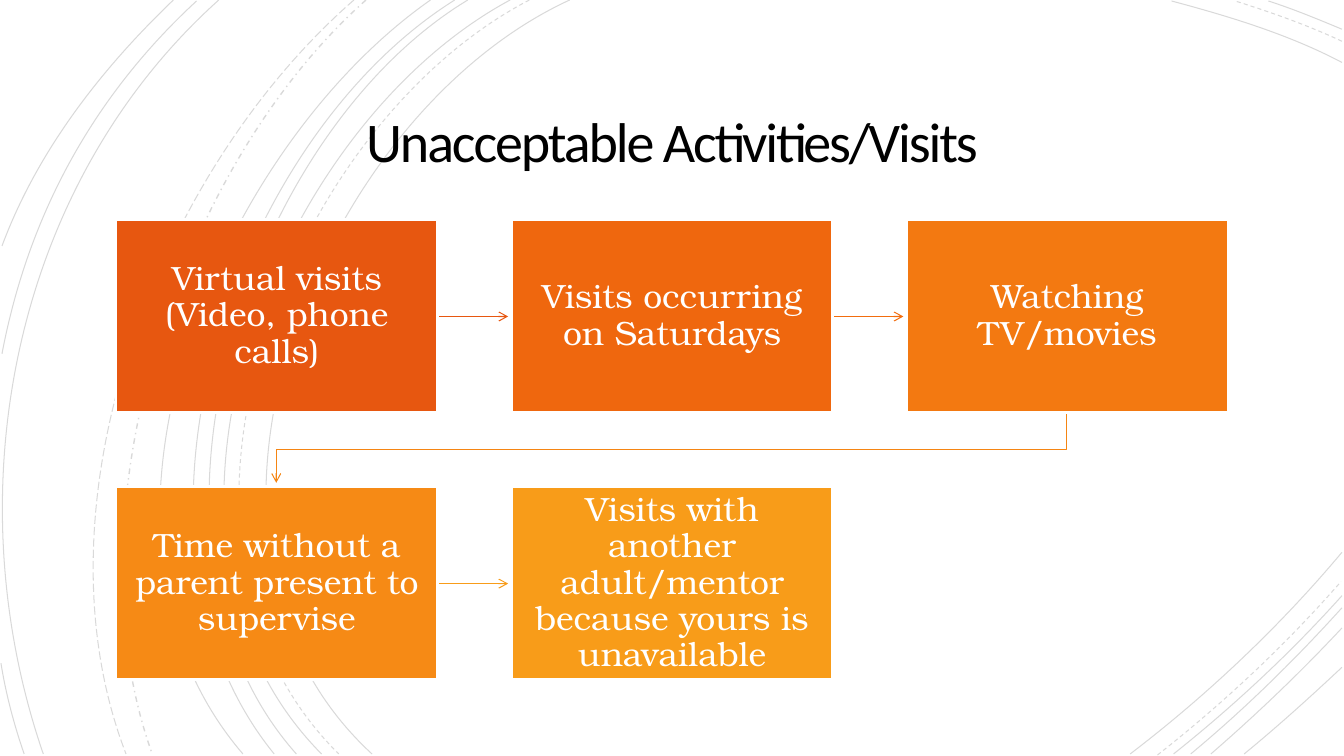
from dataclasses import dataclass

from lxml import etree
from pptx import Presentation
from pptx import util as u
from pptx.dml.color import RGBColor
from pptx.enum import dml, shapes, text
from pptx.oxml.ns import qn

PX = 9144  # EMU per px, 100 px to the inch


@dataclass(frozen=True)
class Theme:
    ink: str = "000000"
    paper: str = "FFFFFF"
    title_font: str = "Calibri"
    step_font: str = "TeX Gyre Bonum"
    title_size: int = 40
    step_size: int = 24
    title_tracking: int = -150  # hundredths of a point
    hairline: float = 0.75
    border: int = 2
    arc_opacity: int = 15  # percent
    step_fills: tuple = ("E75710", "EF670E", "F37911", "F68A15", "F89C19")
    arrow_lines: tuple = ("E75710", "F26D0E", "F58513", "F89C19")


class ActivitySlide:
    def __init__(self, deck, theme):
        self.theme = theme
        self.slide = deck.slides.add_slide(deck.slide_layouts[5])

    def set_line(self, shape, color, width, dash=None):
        shape.line.color.rgb = RGBColor.from_string(color)
        shape.line.width = u.Pt(width)
        if dash is not None:
            shape.line.dash_style = dash
        return shape._element.spPr.find(qn("a:ln"))

    def set_text(self, frame, words, font, size, color, inset, spacing):
        frame.word_wrap = True
        frame.auto_size = text.MSO_AUTO_SIZE.NONE
        frame.vertical_anchor = text.MSO_ANCHOR.MIDDLE
        frame.margin_left = frame.margin_right = inset * PX
        frame.margin_top = frame.margin_bottom = inset * PX
        frame.text = words
        paragraph = frame.paragraphs[0]
        paragraph.alignment = text.PP_ALIGN.CENTER
        paragraph.line_spacing = spacing
        paragraph.font.name = font
        paragraph.font.size = u.Pt(size)
        paragraph.font.color.rgb = RGBColor.from_string(color)
        return paragraph

    def title(self, words, left, top, width, height):
        t = self.theme
        title = self.slide.shapes.title
        title.left, title.top = left * PX, top * PX
        title.width, title.height = width * PX, height * PX
        heading = self.set_text(title.text_frame, words, t.title_font,
                                t.title_size, t.ink, 25, 0.85)
        heading.runs[0]._r.get_or_add_rPr().set("spc", str(t.title_tracking))

    def outline(self, points):
        builder = self.slide.shapes.build_freeform(*points[0], scale=PX)
        builder.add_line_segments(points[1:], close=False)
        shape = builder.convert_to_shape()
        shape.fill.background()
        shape.shadow.inherit = False
        return shape

    def arc(self, points, dash=None, width=None):
        t = self.theme
        arc = self.outline(points)
        # Turn the three segments into one Bézier curve
        path = arc._element.spPr.find(".//" + qn("a:path"))
        curve = etree.SubElement(path, qn("a:cubicBezTo"))
        for segment in path.findall(qn("a:lnTo")):
            curve.append(segment[0])
            path.remove(segment)
        ln = self.set_line(arc, t.ink, width or t.hairline, dash)
        color = ln.find(".//" + qn("a:srgbClr"))
        etree.SubElement(color, qn("a:alpha"), val=str(t.arc_opacity * 1000))

    def arrow(self, points, color):
        if len(points) == 2:
            (x1, y1), (x2, y2) = points
            arrow = self.slide.shapes.add_connector(
                shapes.MSO_CONNECTOR.STRAIGHT, x1 * PX, y1 * PX, x2 * PX, y2 * PX)
            etree.SubElement(arrow._element.spPr, qn("a:effectLst"))
        else:
            arrow = self.outline(points)
        ln = self.set_line(arrow, color, self.theme.hairline)
        etree.SubElement(ln, qn("a:tailEnd"), type="arrow")

    def step(self, words, left, top, width, height, fill):
        t = self.theme
        step = self.slide.shapes.add_shape(
            shapes.MSO_SHAPE.RECTANGLE, left * PX, top * PX, width * PX, height * PX)
        step.shadow.inherit = False
        step.fill.solid()
        step.fill.fore_color.rgb = RGBColor.from_string(fill)
        self.set_line(step, t.paper, t.border)
        self.set_text(step.text_frame, words, t.step_font, t.step_size,
                      t.paper, 16, 0.9)


# Background arcs: start, two control points, end
DASH = dml.MSO_LINE.DASH
SOLID_ARCS = [
    [(565, 0), (315, 115), (143, 540), (369, 748)],
    [(506, 0), (270, 127), (110, 537), (319, 748)],
    [(464, 0), (244, 133), (110, 541), (294, 748)],
    [(451, 0), (231, 138), (97, 533), (272, 748)],
    [(427, 0), (217, 147), (53, 529), (241, 748)],
    [(217, 0), (11, 185), (-46, 490), (43, 748)],
    [(195, 1), (92, 96), (28, 214), (2, 351)],
    [(172, 0), (100, 69), (37, 150), (2, 244)],
    [(1, 658), (6, 689), (14, 719), (24, 748)],
    [(1331, 62), (1278, 34), (1218, 16), (1162, 1)],
    [(1331, 29), (1307, 19), (1283, 9), (1258, 1)],
    [(1121, 748), (1197, 690), (1269, 622), (1331, 548)],
    [(1164, 748), (1223, 701), (1280, 648), (1331, 591)],
    [(1181, 748), (1234, 704), (1284, 655), (1331, 603)],
    [(1201, 748), (1246, 709), (1290, 667), (1331, 623)],
    [(1234, 748), (1267, 721), (1299, 692), (1331, 662)],
]
DASHED_ARCS = [
    ([(525, 0), (285, 125), (123, 537), (336, 748)], DASH, None),
    ([(1331, 41), (1297, 25), (1260, 12), (1225, 1)], DASH, None),
    ([(1148, 749), (1213, 698), (1275, 640), (1330, 577)], DASH, None),
    ([(363, 0), (176, 166), (65, 509), (151, 748)], dml.MSO_LINE.DASH_DOT, 1),
    ([(351, 0), (157, 169), (29, 499), (125, 748)], dml.MSO_LINE.LONG_DASH, None),
]

ACTIVITIES = [
    "Virtual visits (Video, phone calls)",
    "Visits occurring on Saturdays",
    "Watching TV/movies",
    "Time without a parent present to supervise",
    "Visits with another adult/mentor because yours is unavailable",
]

# Step grid
COLUMNS = 3
LEFT, TOP = 115, 218
STEP_W, STEP_H = 319, 191
COLUMN_PITCH, ROW_PITCH = 392, 265
ARROW_LENGTH = 70


def step_origin(index):
    row, column = divmod(index, COLUMNS)
    return LEFT + column * COLUMN_PITCH, TOP + row * ROW_PITCH


def arrow_route(index):
    """Points from one step to the next, wrapping at the end of a row."""
    left, top = step_origin(index)
    if (index + 1) % COLUMNS:
        right, middle = left + STEP_W, top + STEP_H // 2 + 1
        return [(right, middle), (right + ARROW_LENGTH, middle)]
    center, bottom = left + STEP_W // 2, top + STEP_H
    target = LEFT + STEP_W // 2
    turn = bottom + (ROW_PITCH - STEP_H) // 2
    return [(center, bottom), (center, turn), (target, turn),
            (target, bottom + ARROW_LENGTH)]


def main():
    deck = Presentation()
    deck.slide_width, deck.slide_height = 1333 * PX, 750 * PX
    theme = Theme()
    page = ActivitySlide(deck, theme)

    # Background
    for points in SOLID_ARCS:
        page.arc(points)
    for points, dash, width in DASHED_ARCS:
        page.arc(points, dash, width)

    # Title
    page.title("Unacceptable Activities/Visits", 192, 87, 949, 115)

    # Arrows, then the steps they join
    for index, color in enumerate(theme.arrow_lines):
        page.arrow(arrow_route(index), color)
    for index, (activity, fill) in enumerate(zip(ACTIVITIES, theme.step_fills)):
        page.step(activity, *step_origin(index), STEP_W, STEP_H, fill)

    deck.save("out.pptx")


if __name__ == "__main__":
    main()
